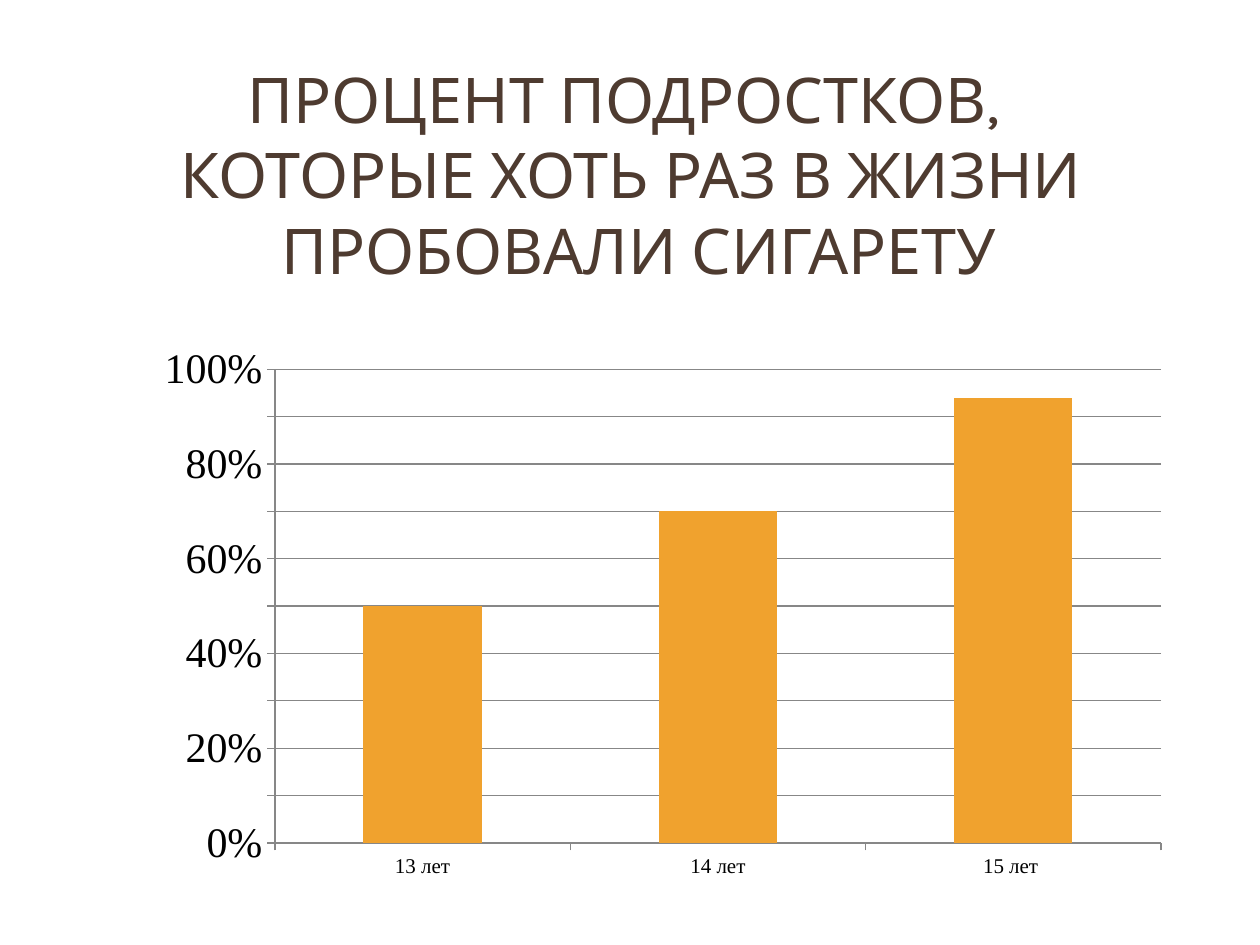
from dataclasses import dataclass

from lxml.etree import SubElement
from pptx import Presentation
from pptx.chart.data import CategoryChartData
from pptx.dml.color import RGBColor
from pptx.enum.chart import XL_CHART_TYPE, XL_TICK_MARK
from pptx.enum.text import MSO_ANCHOR, PP_ALIGN
from pptx.oxml.ns import qn
from pptx.util import Inches, Pt

COLORS = {"title": "4E3B30", "bar": "F0A22E", "text": "000000", "line": "878787"}
TITLE = "ПРОЦЕНТ ПОДРОСТКОВ, \vКОТОРЫЕ ХОТЬ РАЗ В ЖИЗНИ\v ПРОБОВАЛИ СИГАРЕТУ"


@dataclass
class AgeGroup:
    label: str
    share: float


GROUPS = [AgeGroup("13 лет", 0.5), AgeGroup("14 лет", 0.7), AgeGroup("15 лет ", 0.94)]


def color(name: str) -> RGBColor:
    return RGBColor.from_string(COLORS[name])


def add_title(s) -> None:
    tf = s.shapes.add_textbox(Inches(0.33), 0, Inches(9.36), Inches(3.36)).text_frame
    tf.word_wrap = True
    tf.vertical_anchor = MSO_ANCHOR.MIDDLE
    tf.margin_bottom = Inches(0.65)
    p = tf.paragraphs[0]
    p.text = TITLE
    p.alignment = PP_ALIGN.CENTER
    p.font.name = "Karla"
    p.font.size = Pt(36)
    p.font.color.rgb = color("title")


def style_axis(axis, size: int) -> None:
    axis.major_tick_mark = XL_TICK_MARK.OUTSIDE
    axis.minor_tick_mark = XL_TICK_MARK.NONE
    axis.format.line.color.rgb = color("line")
    axis.tick_labels.font.size = Pt(size)


def set_plot_layout(chart, x: float, y: float, w: float, h: float) -> None:
    area = chart.plots[0]._element.getparent()
    layout = area.find(qn("c:layout"))
    if layout is None:
        layout = SubElement(area, qn("c:layout"))
        area.insert(0, layout)
    manual = SubElement(layout, qn("c:manualLayout"))
    values = {"layoutTarget": "inner", "xMode": "edge", "yMode": "edge",
              "x": x, "y": y, "w": w, "h": h}
    for tag, value in values.items():
        SubElement(manual, qn(f"c:{tag}")).set("val", str(value))


def add_share_chart(s, groups: list[AgeGroup]) -> None:
    data = CategoryChartData(number_format="0%")
    data.categories = [g.label for g in groups]
    data.add_series("Series 1", [g.share for g in groups])
    chart = s.shapes.add_chart(XL_CHART_TYPE.COLUMN_STACKED, Inches(0.94), Inches(2.66),
                               Inches(8.28), Inches(4.53), data).chart
    chart.has_legend = False
    chart.has_title = False
    chart.font.name = "Times New Roman"
    chart.font.size = Pt(12)
    chart.font.color.rgb = color("text")

    plot = chart.plots[0]
    plot.vary_by_categories = False
    plot.gap_width = 150
    plot.overlap = 100
    fill = plot.series[0].format.fill
    fill.solid()
    fill.fore_color.rgb = color("bar")

    style_axis(chart.category_axis, 12)
    axis = chart.value_axis
    style_axis(axis, 24)
    axis.minimum_scale, axis.maximum_scale, axis.major_unit = 0, 1, 0.1
    axis.tick_labels.number_format = "0%"
    axis.tick_labels.number_format_is_linked = False
    axis.has_major_gridlines = True
    axis.major_gridlines.format.line.color.rgb = color("line")
    set_plot_layout(chart, 0.15, 0.06, 0.85, 0.83)


def main() -> None:
    prs = Presentation()
    prs.slide_width, prs.slide_height = Inches(10), Inches(7.5)
    s = prs.slides.add_slide(prs.slide_layouts[6])
    add_title(s)
    add_share_chart(s, GROUPS)
    prs.save("out.pptx")


if __name__ == "__main__":
    main()
